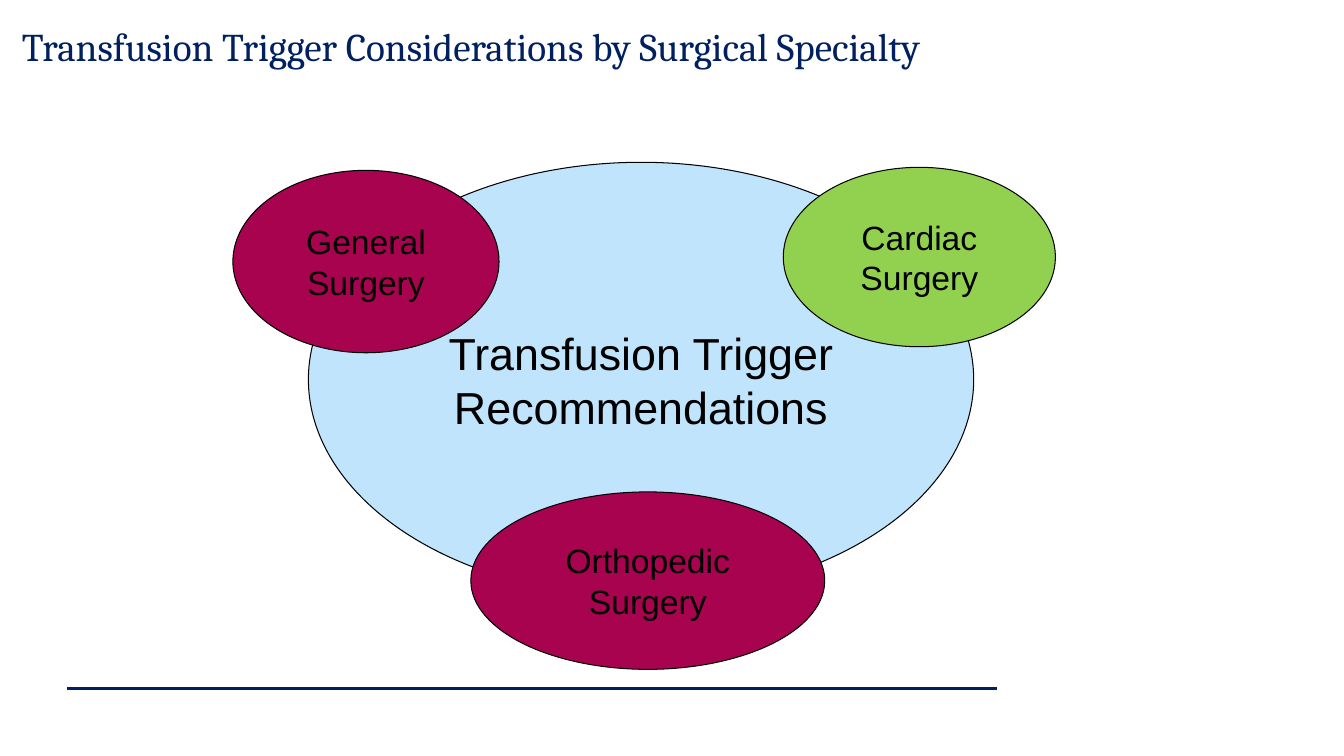
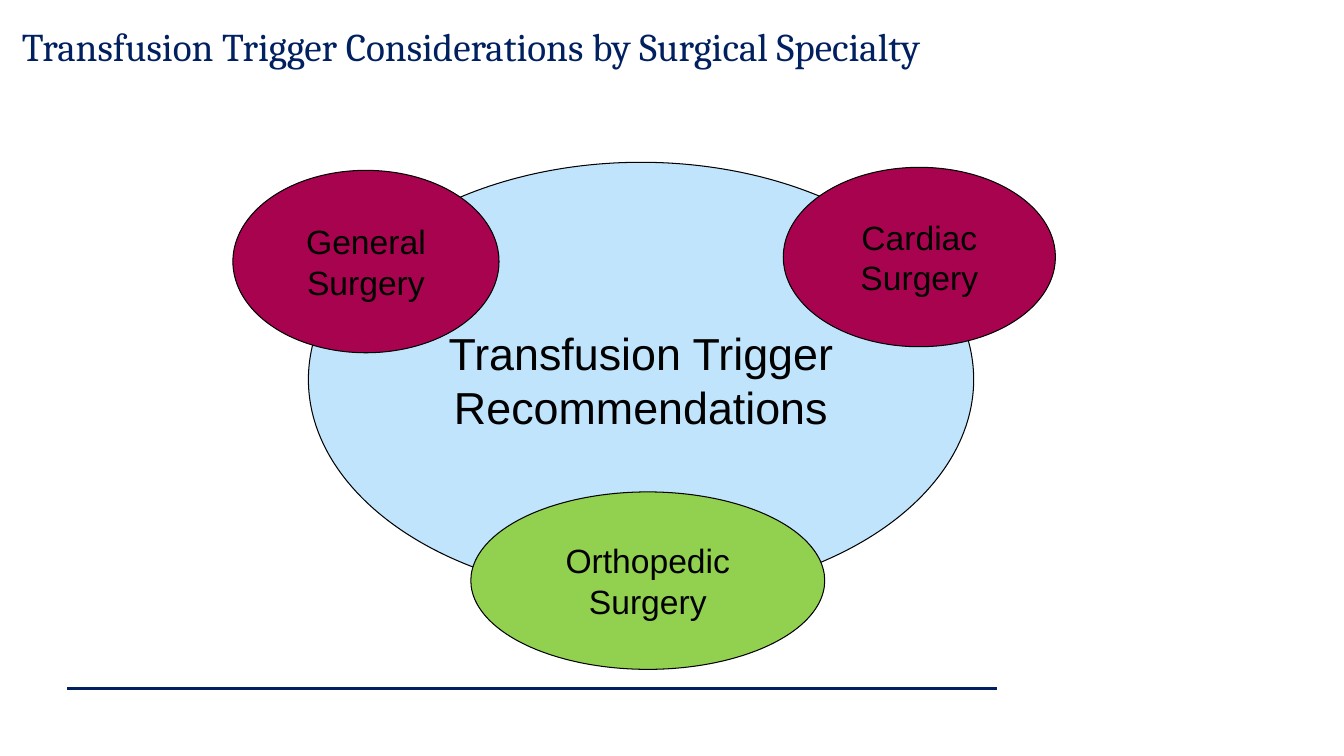
"""Build two slides on transfusion triggers, each highlighting one surgical specialty."""
import pptx
import pptx.util
import pptx.dml.color
import pptx.enum.shapes
import pptx.enum.text
import pptx.oxml.ns
import lxml.etree

RGBColor = pptx.dml.color.RGBColor
NAVY = RGBColor(0x00, 0x20, 0x60)
BLACK = RGBColor(0x00, 0x00, 0x00)
SKY = RGBColor(0xBF, 0xE4, 0xFC)
CRIMSON = RGBColor(0xA8, 0x03, 0x4F)
GREEN = RGBColor(0x92, 0xD0, 0x50)

Pt = pptx.util.Pt
ANCHOR = pptx.enum.text.MSO_ANCHOR
ALIGN = pptx.enum.text.PP_ALIGN

prs = pptx.Presentation()
prs.slide_width = pptx.util.Inches(13.33)
prs.slide_height = pptx.util.Inches(7.5)
COL = prs.slide_width / 100
ROW = prs.slide_height / 100


def box(left, top, width, height):
    """Turn percentages of the slide into lengths."""
    return [round(n) for n in (left * COL, top * ROW, width * COL, height * ROW)]


def write(sp, text, size=24, font="Arial", color=BLACK, align=ALIGN.CENTER, anchor=ANCHOR.MIDDLE):
    """Write one formatted paragraph into a shape."""
    tf = sp.text_frame
    tf.word_wrap = True
    tf.vertical_anchor = anchor
    p = tf.paragraphs[0]
    p.alignment = align
    r = p.add_run()
    r.text = text
    r.font.size = Pt(size)
    r.font.name = font
    r.font.color.rgb = color


TITLE = "Transfusion Trigger Considerations by Surgical Specialty"
HUB = "Transfusion Trigger Recommendations"
ELLIPSES = {
    HUB: box(22.95, 21.47, 49.5, 57.47),
    "General Surgery": box(17.33, 22.53, 19.8, 24.13),
    "Cardiac Surgery": box(58.28, 22.13, 20.25, 23.73),
    "Orthopedic Surgery": box(35.03, 65.07, 26.33, 23.47),
}

for highlight in ("Cardiac Surgery", "Orthopedic Surgery"):
    s = prs.slides.add_slide(prs.slide_layouts[6])

    left, top, width, height = box(5, 91.1, 69.2, 0)
    rule = s.shapes.add_connector(
        pptx.enum.shapes.MSO_CONNECTOR.STRAIGHT, left, top, left + width, top)
    rule.line.color.rgb = NAVY
    rule.line.width = Pt(2)
    lxml.etree.SubElement(rule._element.spPr, pptx.oxml.ns.qn("a:effectLst"))

    title = s.shapes.add_textbox(*box(0.9, 2.27, 90, 7.6))
    write(title, TITLE, size=28, font="Cambria", color=NAVY, align=ALIGN.LEFT, anchor=ANCHOR.BOTTOM)

    for label, place in ELLIPSES.items():
        sp = s.shapes.add_shape(pptx.enum.shapes.MSO_SHAPE.OVAL, *place)
        sp.shadow.inherit = False
        sp.fill.solid()
        sp.fill.fore_color.rgb = {HUB: SKY, highlight: GREEN}.get(label, CRIMSON)
        sp.line.color.rgb = BLACK
        sp.line.width = Pt(0.75)
        write(sp, label, size=32 if label == HUB else 24)

prs.save("out.pptx")
